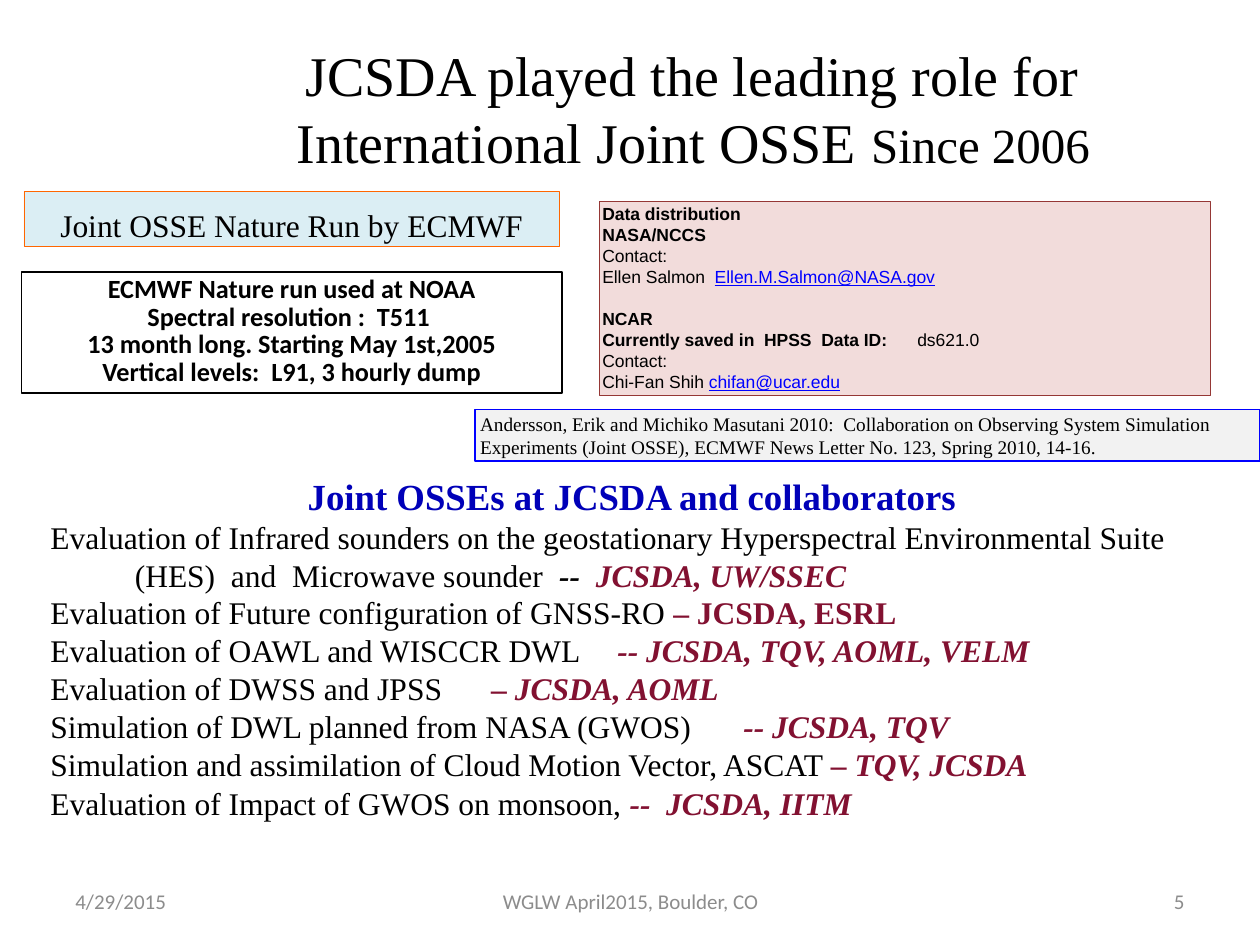
from pptx import Presentation
from pptx.dml.color import RGBColor
from pptx.enum.shapes import MSO_SHAPE
from pptx.enum.text import MSO_ANCHOR, MSO_AUTO_SIZE, PP_ALIGN
from pptx.oxml.ns import qn
from pptx.util import Inches, Pt
from lxml.etree import SubElement

WIDTH, HEIGHT = 10, 7.5
SERIF, SANS, HUMANIST = "Times New Roman", "Arial", "Calibri"
BLACK, MAROON, LINK, GRAY = "000000", "821131", "0000FF", "8C8C8C"
LEFT, CENTER, RIGHT = PP_ALIGN.LEFT, PP_ALIGN.CENTER, PP_ALIGN.RIGHT
HANGING = 0.67


def color(hex_value):
    return RGBColor.from_string(hex_value)


def place(shape, left, top, width, height):
    shape.left, shape.top = Inches(left), Inches(top)
    shape.width, shape.height = Inches(width), Inches(height)


def prepare_frame(shape, insets=(0.1, 0.05), anchor=MSO_ANCHOR.TOP):
    frame = shape.text_frame
    frame.word_wrap = True
    frame.auto_size = MSO_AUTO_SIZE.NONE
    frame.vertical_anchor = anchor
    frame.margin_left = frame.margin_right = Inches(insets[0])
    frame.margin_top = frame.margin_bottom = Inches(insets[1])
    return frame


def set_indent(paragraph, hanging=0, tab=None):
    """Remove the bullet, hang the first line and set one tab stop."""
    properties = paragraph._p.get_or_add_pPr()
    properties.set("marL", str(Inches(hanging)))
    properties.set("indent", str(-Inches(hanging)))
    SubElement(properties, qn("a:buNone"))
    if tab:
        stops = SubElement(properties, qn("a:tabLst"))
        SubElement(stops, qn("a:tab"), pos=str(Inches(tab)), algn="l")


def write(paragraph, text, size=18, font=SERIF, ink=BLACK, bold=False,
          italic=False, underline=False):
    run = paragraph.add_run()
    run.text = text
    run.font.size, run.font.name = Pt(size), font
    run.font.bold, run.font.italic = bold, italic
    run.font.underline = underline
    run.font.color.rgb = color(ink)


def add_line(frame, *pieces, align=LEFT, before=0, spacing=1.0,
             hanging=0, tab=None, **style):
    """Append a paragraph; each piece is a (text, format changes) pair."""
    first = frame.paragraphs[0]
    paragraph = frame.add_paragraph() if first.runs else first
    set_indent(paragraph, hanging, tab)
    paragraph.alignment = align
    paragraph.space_before = Pt(before)
    paragraph.line_spacing = spacing
    for text, changes in pieces:
        write(paragraph, text, **{**style, **changes})


def add_panel(slide, bounds, line, line_width=0.75, fill=None, **frame_format):
    panel = slide.shapes.add_shape(MSO_SHAPE.RECTANGLE, *map(Inches, bounds))
    panel.shadow.inherit = False
    if fill:
        panel.fill.solid()
        panel.fill.fore_color.rgb = color(fill)
    else:
        panel.fill.background()
    panel.line.color.rgb = color(line)
    panel.line.width = Pt(line_width)
    return prepare_frame(panel, **frame_format)


def add_title(slide):
    title = slide.shapes.title
    place(title, 1.22, 0.18, 8.66, 1.35)
    frame = prepare_frame(title, anchor=MSO_ANCHOR.MIDDLE)
    style = dict(align=CENTER, size=32)
    add_line(frame, ("JCSDA played the leading role for ", {}), **style)
    add_line(frame, ("International Joint OSSE ", {}),
             ("Since 2006 ", {"size": 28}), **style)


def add_nature_run(slide):
    middle = dict(insets=(0.01, 0.01), anchor=MSO_ANCHOR.MIDDLE)
    heading = add_panel(slide, (0.19, 1.52, 4.25, 0.44), "FF6600", 0.5,
                        fill="DBEEF4", **middle)
    add_line(heading, ("Joint OSSE Nature Run by ECMWF", {}),
             align=CENTER, spacing=Pt(27.9))

    facts = add_panel(slide, (0.17, 2.16, 4.29, 0.96), BLACK, **middle)
    for row, fact in enumerate(("ECMWF Nature run used at NOAA",
                                "Spectral resolution :  T511 ",
                                "13 month long. Starting May 1st,2005",
                                "Vertical levels:  L91, 3 hourly dump")):
        add_line(facts, (fact, {}), align=CENTER, spacing=0.8,
                 before=1.4 if row else 0, size=15, font=HUMANIST, bold=True)


def add_citation(slide):
    frame = add_panel(slide, (3.77, 3.25, 6.23, 0.41), LINK, fill="F2F2F2",
                      insets=(0.04, 0.02))
    add_line(frame, ("Andersson, Erik and Michiko Masutani 2010:  Collaboration "
                     "on Observing System Simulation Experiments (Joint OSSE), "
                     "ECMWF News Letter No. 123, Spring 2010, 14-16.", {}), size=11)


def add_distribution(slide):
    frame = add_panel(slide, (4.76, 1.6, 4.85, 1.54), "953735", fill="F2DCDB",
                      insets=(0.02, 0.01))
    style = dict(size=10, font=SANS)
    strong = {"bold": True}
    link = {"ink": LINK, "underline": True}
    add_line(frame, ("Data distribution", strong), **style)
    add_line(frame, ("NASA/NCCS", strong), **style)
    add_line(frame, ("Contact:", {}), **style)
    add_line(frame, ("Ellen Salmon  ", {}), ("Ellen.M.Salmon@NASA.gov", link),
             **style)
    add_line(frame, ("NCAR", strong), before=12, **style)
    add_line(frame, ("Currently saved in  HPSS  Data ID:", strong),
             ("\tds621.0", {}), tab=2.46, **style)
    add_line(frame, ("Contact:", {}), **style)
    add_line(frame, ("Chi-Fan Shih ", {}), ("chifan@ucar.edu", link), **style)


def add_studies(slide):
    body = slide.placeholders[1]
    place(body, 0.3, 3.71, 9.43, 3.1)
    frame = prepare_frame(body)
    add_line(frame, ("Joint OSSEs at JCSDA and collaborators", {}),
             align=CENTER, size=21, ink="0000B8", bold=True)

    emphasis = {"bold": True, "italic": True}
    partner = {"ink": MAROON, **emphasis}
    add_line(frame, ("Evaluation of Infrared sounders on the geostationary "
                     "Hyperspectral Environmental Suite (HES)  and  "
                     "Microwave sounder  ", {}),
             ("--  ", emphasis), ("JCSDA, UW/SSEC", partner), hanging=HANGING)
    upright = {**partner, "italic": False}
    # study, partners, partner format, tab stop, paragraph format
    studies = (
        ("Evaluation of Future configuration of GNSS-RO ", "– JCSDA, ESRL",
         upright, None, {}),
        ("Evaluation of OAWL and WISCCR DWL\t", "-- JCSDA, TQV, AOML, VELM",
         partner, 4.39, {}),
        ("Evaluation of DWSS and JPSS\t", "– JCSDA, AOML", partner, 3.3, {}),
        ("Simulation of DWL planned from NASA (GWOS)\t", "-- JCSDA, TQV",
         partner, 5.4, {}),
        ("Simulation and assimilation of Cloud Motion Vector, ASCAT ",
         "– TQV, JCSDA", partner, None, {}),
        ("Evaluation of Impact of GWOS on monsoon, ", "--  JCSDA, IITM",
         partner, None, {"before": 3.6, "spacing": 0.9}),
    )
    for study, partners, look, tab, layout in studies:
        add_line(frame, (study, {}), (partners, look), tab=tab, **layout)


def add_footer(slide):
    for left, width, text, align in (
            (0.5, 2.33, "4/29/2015", LEFT),
            (3.42, 3.17, "WGLW April2015, Boulder, CO", CENTER),
            (7.17, 2.33, "5", RIGHT)):
        box = slide.shapes.add_textbox(*map(Inches, (left, 6.95, width, 0.4)))
        frame = prepare_frame(box, anchor=MSO_ANCHOR.MIDDLE)
        add_line(frame, (text, {}), align=align, size=12, font=HUMANIST, ink=GRAY)


def main():
    deck = Presentation()
    deck.slide_width, deck.slide_height = Inches(WIDTH), Inches(HEIGHT)
    slide = deck.slides.add_slide(deck.slide_layouts[1])
    add_title(slide)
    add_nature_run(slide)
    add_citation(slide)
    add_distribution(slide)
    add_studies(slide)
    add_footer(slide)
    deck.save("out.pptx")


if __name__ == "__main__":
    main()
